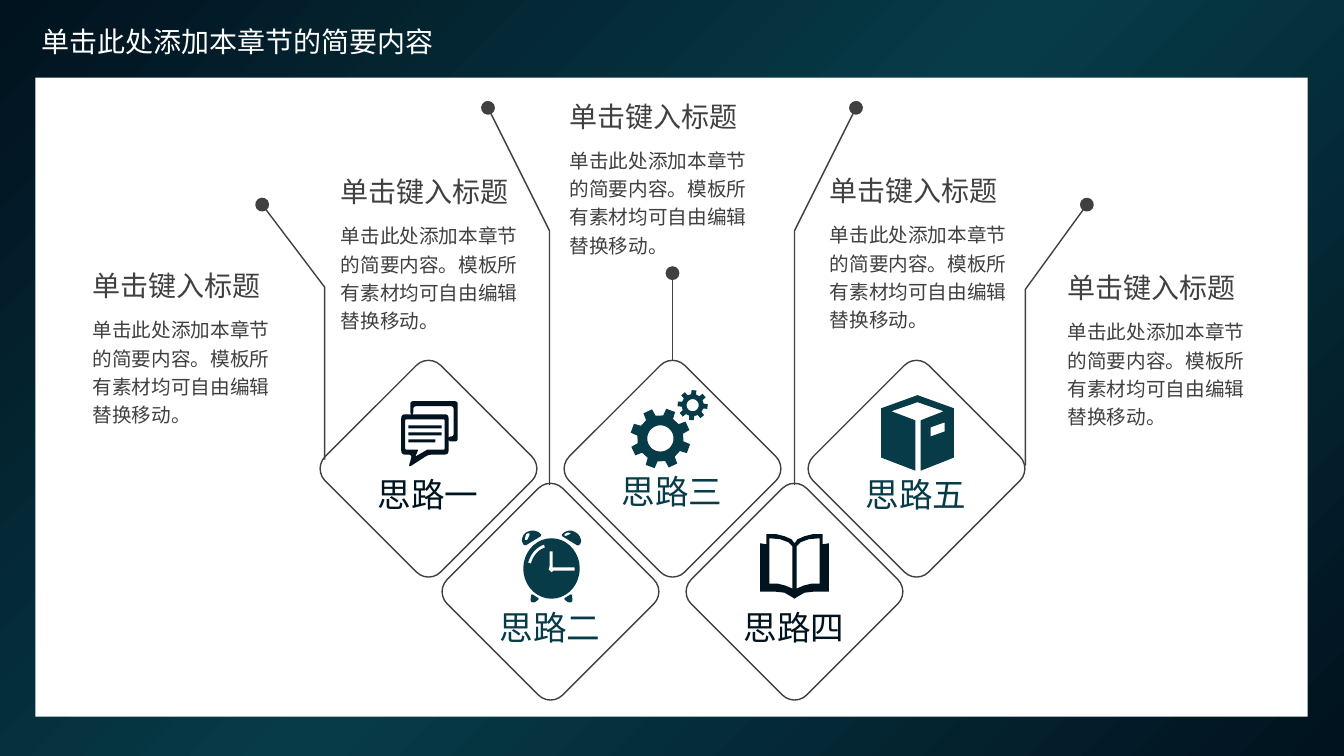
from math import cos, radians, sin

from lxml.etree import SubElement
from pptx import Presentation
from pptx.dml.color import RGBColor
from pptx.enum.shapes import MSO_CONNECTOR, MSO_SHAPE
from pptx.enum.text import MSO_ANCHOR, PP_ALIGN
from pptx.oxml.ns import qn
from pptx.util import Inches, Pt

NAVY = RGBColor(0x01, 0x13, 0x1F)
TEAL = RGBColor(0x07, 0x3B, 0x48)
GRAY = RGBColor(0x40, 0x40, 0x40)
WHITE = RGBColor(0xFF, 0xFF, 0xFF)
CHINESE_FONT = "Noto Sans CJK SC"

CAPTION_TITLE = "单击键入标题"
CAPTION_BODY = "单击此处添加本章节的简要内容。模板所有素材均可自由编辑替换移动。"
CAPTION_CORNERS = [(0.92, 2.66), (3.38, 1.73), (5.65, 0.98), (8.23, 1.72), (10.59, 2.68)]
LEADERS = [
    [(3.22, 4.56), (3.22, 2.85), (2.6, 2.03)],
    [(10.17, 4.62), (10.17, 2.87), (10.78, 2.03)],
    [(7.88, 4.81), (7.88, 2.29), (8.49, 1.07)],
    [(5.45, 4.81), (5.45, 2.29), (4.84, 1.07)],
]
IDEAS = [  # label, label top, colour
    ("思路一", 4.65, NAVY),
    ("思路二", 5.97, TEAL),
    ("思路三", 4.62, TEAL),
    ("思路四", 5.97, NAVY),
    ("思路五", 4.65, TEAL),
]
MIDDLE_X, DIAMOND_PITCH, DIAMOND_SIDE = 6.67, 1.21, 1.62
DIAMOND_TOPS = (3.84, 5.06)


def paint_background(page):
    fill = page.background.fill
    fill.gradient()
    fill.gradient_angle = 315
    first, last = fill.gradient_stops
    first.color.rgb, last.color.rgb = NAVY, NAVY
    stops = page.background._cSld.find(".//" + qn("a:gsLst"))
    middle = SubElement(stops, qn("a:gs"), pos="50000")
    SubElement(middle, qn("a:srgbClr"), val=str(TEAL))
    stops.insert(1, middle)


def add_text(page, text, left, top, width, height, size, color,
             font=CHINESE_FONT, align=PP_ALIGN.LEFT, inset=0, spacing=None):
    box = page.shapes.add_textbox(Inches(left), Inches(top), Inches(width), Inches(height))
    frame = box.text_frame
    frame.word_wrap = True
    frame.vertical_anchor = MSO_ANCHOR.MIDDLE
    frame.margin_left = frame.margin_right = Inches(inset)
    frame.margin_top = frame.margin_bottom = Inches(inset / 2)
    frame.text = text
    para = frame.paragraphs[0]
    para.alignment = align
    para.line_spacing = spacing
    span = para.runs[0]
    span.font.size = Pt(size)
    span.font.color.rgb = color
    span.font.name = font
    SubElement(span.font._element, qn("a:ea"), typeface=CHINESE_FONT)


def add_outline(page, contours, closed=True):
    """Build one freeform from several contours; an inner contour is a hole."""
    scaled = [[(Inches(x), Inches(y)) for x, y in contour] for contour in contours]
    builder = page.shapes.build_freeform(*scaled[0][0])
    for number, contour in enumerate(scaled):
        if number:
            builder.move_to(*contour[0])
        builder.add_line_segments(contour[1:], close=closed)
    shape = builder.convert_to_shape()
    shape.shadow.inherit = False
    return shape


def add_icon(page, contours, color):
    shape = add_outline(page, contours)
    shape.fill.solid()
    shape.fill.fore_color.rgb = color
    shape.line.fill.background()


def style_leader(line, width):
    line.color.rgb = GRAY
    line.width = Pt(width)
    SubElement(line._get_or_add_ln(), qn("a:tailEnd"), type="oval", w="lg", len="lg")


def add_leaders(page):
    for points in LEADERS:
        shape = add_outline(page, [points], closed=False)
        shape.fill.background()
        style_leader(shape.line, 1)
    stem = page.shapes.add_connector(MSO_CONNECTOR.STRAIGHT, Inches(MIDDLE_X), Inches(3.57),
                                     Inches(MIDDLE_X), Inches(2.71))
    style_leader(stem.line, 0.5)
    SubElement(stem._element.spPr, qn("a:effectLst"))


def add_diamond(page, center, top):
    shape = page.shapes.add_shape(MSO_SHAPE.ROUNDED_RECTANGLE, Inches(center - DIAMOND_SIDE / 2),
                                  Inches(top), Inches(DIAMOND_SIDE), Inches(DIAMOND_SIDE))
    shape.adjustments[0] = 0.105
    shape.rotation = 45
    shape.shadow.inherit = False
    shape.fill.background()
    shape.line.color.rgb = GRAY
    shape.line.width = Pt(1)


def arc(x, y, rx, ry, start=0, end=360, steps=36):
    angles = [radians(start + (end - start) * i / steps) for i in range(steps + 1)]
    return [(x + rx * cos(a), y + ry * sin(a)) for a in angles]


def rounded(corners, cut=0.04):
    """Replace each corner of a polygon by a short curve."""
    points = []
    for i, (x, y) in enumerate(corners):
        ends = []
        for nx, ny in (corners[i - 1], corners[(i + 1) % len(corners)]):
            share = min(0.5, cut / ((nx - x) ** 2 + (ny - y) ** 2) ** 0.5)
            ends.append((x + (nx - x) * share, y + (ny - y) * share))
        (ax, ay), (bx, by) = ends
        for t in (0, 0.25, 0.5, 0.75, 1):
            a, b, c = (1 - t) ** 2, 2 * t * (1 - t), t * t
            points.append((a * ax + b * x + c * bx, a * ay + b * y + c * by))
    return points


def bar(left, top, right, bottom):
    return [(left, top), (right, top), (right, bottom), (left, bottom)]


def gear(x, y, tip, root, hole, turn):
    teeth = []
    for tooth in range(8):
        for offset, radius in ((-13, root), (-9, tip), (9, tip), (13, root)):
            angle = radians(turn + 45 * tooth + offset)
            teeth.append((x + radius * cos(angle), y + radius * sin(angle)))
    return [teeth, arc(x, y, hole, hole)]


def chat_icon():
    back = [(4.07, 4.11), (4.07, 3.98), (4.54, 3.98), (4.54, 4.38), (4.45, 4.38),
            (4.45, 4.33), (4.5, 4.33), (4.5, 4.03), (4.1, 4.03), (4.1, 4.11)]
    front = [(3.98, 4.11), (4.45, 4.11), (4.45, 4.51), (4.25, 4.51), (4.05, 4.64),
             (4.09, 4.51), (3.98, 4.51)]
    inside = [(4.02, 4.16), (4.41, 4.16), (4.41, 4.46), (4.24, 4.46), (4.12, 4.53),
              (4.15, 4.46), (4.02, 4.46)]
    rows = [bar(4.05, top, right, top + 0.03)
            for top, right in ((4.22, 4.38), (4.29, 4.38), (4.36, 4.32))]
    return [rounded(back, 0.03), rounded(front), rounded(inside, 0.01)] + rows


def clock_icon():
    hands = [(5.45, 5.47), (5.48, 5.47), (5.48, 5.63), (5.7, 5.63), (5.7, 5.66),
             (5.49, 5.66), (5.47, 5.68), (5.44, 5.65), (5.45, 5.62)]
    shine = arc(5.47, 5.65, 0.24, 0.26, 195, 252) + arc(5.47, 5.65, 0.21, 0.23, 252, 195)
    bells = [[(5.2, 5.42), (5.17, 5.36), (5.2, 5.29), (5.27, 5.26), (5.33, 5.27), (5.38, 5.31)],
             [(5.56, 5.31), (5.61, 5.27), (5.67, 5.26), (5.74, 5.3), (5.77, 5.37), (5.74, 5.42)]]
    glints = [[(5.2, 5.36), (5.22, 5.29), (5.26, 5.29), (5.23, 5.36)],
              [(5.59, 5.31), (5.62, 5.28), (5.67, 5.29), (5.61, 5.32)]]
    feet = [[(5.27, 5.89), (5.35, 5.94), (5.3, 5.98), (5.26, 5.97)],
            [(5.67, 5.89), (5.59, 5.94), (5.64, 5.98), (5.68, 5.97)]]
    return ([arc(5.47, 5.64, 0.28, 0.3), hands, shine]
            + [rounded(part, 0.03) for part in bells]
            + [rounded(part, 0.02) for part in glints + feet])


def book_icon():
    """Mirror the left half of an open book about its spine."""
    spine = 7.88
    cover = [(7.88, 5.39), (7.85, 5.35), (7.78, 5.32), (7.7, 5.3), (7.6, 5.3), (7.6, 5.4),
             (7.54, 5.39), (7.54, 5.87), (7.69, 5.87), (7.78, 5.88), (7.85, 5.92), (7.88, 5.94)]
    sheet = [(7.63, 5.34), (7.74, 5.35), (7.82, 5.38), (7.86, 5.42), (7.86, 5.84),
             (7.79, 5.81), (7.71, 5.79), (7.63, 5.79)]

    def mirrored(points):
        return [(2 * spine - x, y) for x, y in points]

    return [cover + mirrored(cover)[::-1], sheet, mirrored(sheet)]


def crate_icon():
    faces = [(9.1, 3.92), (8.74, 4.05), (8.74, 4.54), (9.08, 4.67), (9.08, 4.17), (8.84, 4.08),
             (9.1, 3.99), (9.36, 4.08), (9.13, 4.17), (9.13, 4.67), (9.46, 4.54), (9.46, 4.05)]
    return [faces, [(9.37, 4.28), (9.23, 4.33), (9.23, 4.24), (9.37, 4.19)]]


def main():
    deck = Presentation()
    deck.slide_width, deck.slide_height = Inches(13.33), Inches(7.5)
    page = deck.slides.add_slide(deck.slide_layouts[6])
    paint_background(page)
    panel = page.shapes.add_shape(MSO_SHAPE.RECTANGLE, Inches(0.35), Inches(0.77),
                                  Inches(12.62), Inches(6.34))
    panel.shadow.inherit = False
    panel.fill.solid()
    panel.fill.fore_color.rgb = WHITE
    panel.line.fill.background()
    add_text(page, "单击此处添加本章节的简要内容", 0.31, 0.19, 4.44, 0.44, 20, WHITE, inset=0.1)
    add_leaders(page)
    gears = gear(6.55, 4.35, 0.3, 0.23, 0.13, 20) + gear(6.87, 4.02, 0.15, 0.11, 0.06, 5)
    icons = [chat_icon(), clock_icon(), gears, book_icon(), crate_icon()]
    for number, ((label, top, color), icon) in enumerate(zip(IDEAS, icons)):
        center = MIDDLE_X + (number - 2) * DIAMOND_PITCH
        add_diamond(page, center, DIAMOND_TOPS[number % 2])
        add_icon(page, icon, color)
        add_text(page, label, center - 0.79, top, 1.57, 0.5, 24, color,
                 font="Arial Narrow", align=PP_ALIGN.CENTER, inset=0.1)
    for left, top in CAPTION_CORNERS:
        add_text(page, CAPTION_TITLE, left, top, 1.94, 0.34, 20, GRAY)
        add_text(page, CAPTION_BODY, left, top + 0.45, 1.9, 1.12, 14, GRAY, spacing=Pt(20.2))
    deck.save("out.pptx")


if __name__ == "__main__":
    main()
